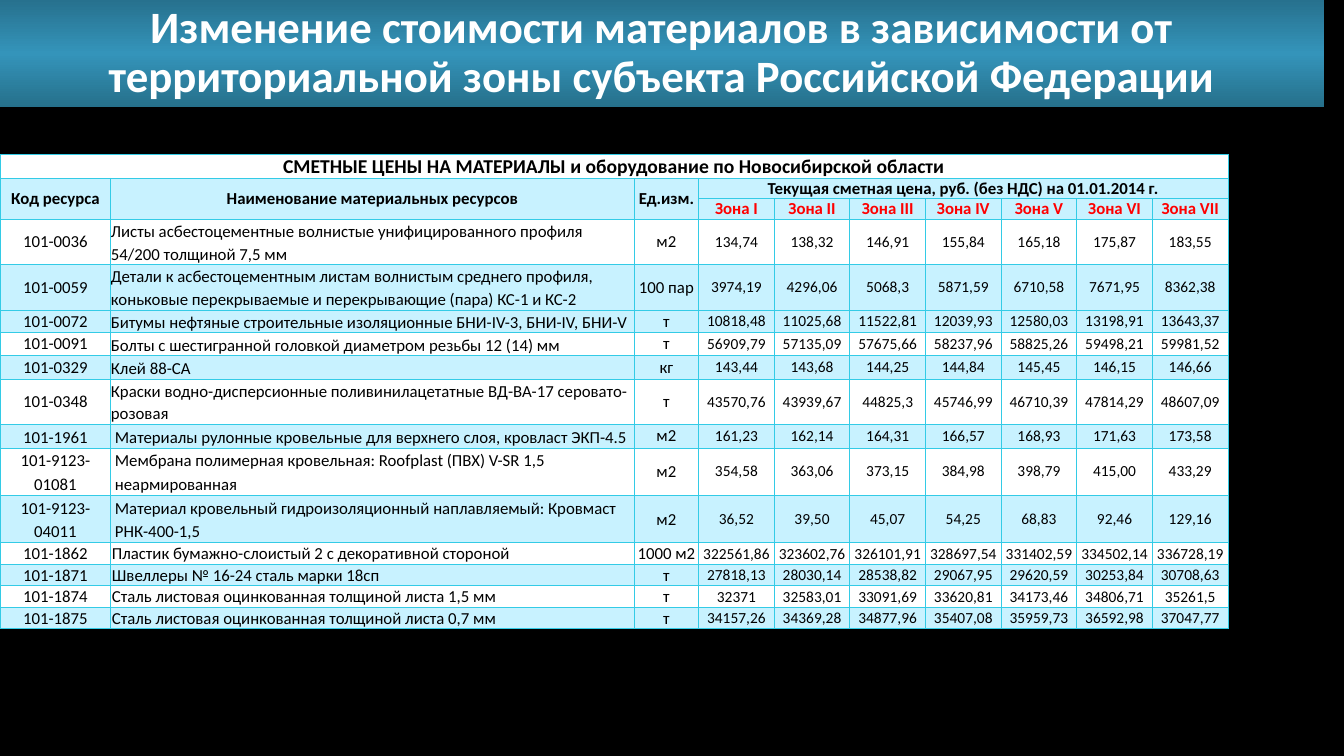
"""Builds a slide with material prices by territorial zone."""
from lxml import etree
from pptx import Presentation, util as u
from pptx.dml.color import RGBColor
from pptx.enum import text
from pptx.oxml import ns

WHITE = RGBColor(0xFF, 0xFF, 0xFF)
BLACK = RGBColor(0, 0, 0)
RED = RGBColor(0xFF, 0, 0)
TINT = RGBColor(0xC8, 0xF2, 0xFF)
CYAN = RGBColor(0x33, 0xCB, 0xE6)
TEAL = RGBColor(0x34, 0x94, 0xBA)
DARK = RGBColor(0x27, 0x71, 0x8E)
DEEP = RGBColor(0x26, 0x70, 0x8B)
MID, TOP, LOW = (text.MSO_ANCHOR.MIDDLE, text.MSO_ANCHOR.TOP,
                 text.MSO_ANCHOR.BOTTOM)
MAIN, LEFT = text.PP_ALIGN.CENTER, text.PP_ALIGN.LEFT

TITLE = ("Изменение стоимости материалов в зависимости от "
         "территориальной зоны субъекта Российской Федерации")
HEAD = "СМЕТНЫЕ ЦЕНЫ НА МАТЕРИАЛЫ и оборудование по Новосибирской области"
LABELS = ["Код ресурса", "Наименование материальных ресурсов", "Ед.изм.",
          "Текущая сметная цена, руб. (без НДС) на 01.01.2014 г."]
ZONES = ["I", "II", "III", "IV", "V", "VI", "VII"]
ITEMS = [
    ("101-0036", "Листы асбестоцементные волнистые унифицированного профиля "
     "54/200 толщиной 7,5 мм", "м2",
     "134,74 138,32 146,91 155,84 165,18 175,87 183,55"),
    ("101-0059", "Детали к асбестоцементным листам волнистым среднего профиля, "
     "коньковые перекрываемые и перекрывающие (пара) КС-1 и КС-2", "100 пар",
     "3974,19 4296,06 5068,3 5871,59 6710,58 7671,95 8362,38"),
    ("101-0072", "Битумы нефтяные строительные изоляционные "
     "БНИ-IV-3, БНИ-IV, БНИ-V", "т",
     "10818,48 11025,68 11522,81 12039,93 12580,03 13198,91 13643,37"),
    ("101-0091", "Болты с шестигранной головкой диаметром резьбы 12 (14) мм", "т",
     "56909,79 57135,09 57675,66 58237,96 58825,26 59498,21 59981,52"),
    ("101-0329", "Клей 88-СА", "кг",
     "143,44 143,68 144,25 144,84 145,45 146,15 146,66"),
    ("101-0348", "Краски водно-дисперсионные поливинилацетатные ВД-ВА-17 "
     "серовато-розовая", "т",
     "43570,76 43939,67 44825,3 45746,99 46710,39 47814,29 48607,09"),
    ("101-1961", "Материалы рулонные кровельные для верхнего слоя, "
     "кровласт ЭКП-4.5", "м2",
     "161,23 162,14 164,31 166,57 168,93 171,63 173,58"),
    ("101-9123-01081", "Мембрана полимерная кровельная: Roofplast (ПВХ) "
     "V-SR 1,5 неармированная", "м2",
     "354,58 363,06 373,15 384,98 398,79 415,00 433,29"),
    ("101-9123-04011", "Материал кровельный гидроизоляционный наплавляемый: "
     "Кровмаст РНК-400-1,5", "м2",
     "36,52 39,50 45,07 54,25 68,83 92,46 129,16"),
    ("101-1862", "Пластик бумажно-слоистый 2 с декоративной стороной", "1000 м2",
     "322561,86 323602,76 326101,91 328697,54 331402,59 334502,14 336728,19"),
    ("101-1871", "Швеллеры № 16-24 сталь марки 18сп", "т",
     "27818,13 28030,14 28538,82 29067,95 29620,59 30253,84 30708,63"),
    ("101-1874", "Сталь листовая оцинкованная толщиной листа 1,5 мм", "т",
     "32371 32583,01 33091,69 33620,81 34173,46 34806,71 35261,5"),
    ("101-1875", "Сталь листовая оцинкованная толщиной листа 0,7 мм", "т",
     "34157,26 34369,28 34877,96 35407,08 35959,73 36592,98 37047,77"),
]
WIDTHS = [1.1, 5.19, 0.64] + [0.75] * 7
HEIGHTS = [0.24, 0.2, 0.2, 0.45, 0.45, 0.22, 0.23, 0.23, 0.45,
           0.23, 0.47, 0.47, 0.21, 0.21, 0.21, 0.21]
PALE = {0, 3, 6, 8, 10, 12, 14}
ROLLS = range(6, 9)


class Deck:
    """Holds the style and the current slide."""

    def __init__(self):
        self.show = Presentation()
        self.show.slide_width = u.Inches(13.33)
        self.show.slide_height = u.Inches(7.5)
        self.slide = self.show.slides.add_slide(self.show.slide_layouts[5])
        fill = self.slide.background.fill
        fill.solid()
        fill.fore_color.rgb = BLACK

    def style(self, item, values):
        """Sets attributes from a dict."""
        for name, value in values.items():
            setattr(item, name, value)

    def label(self, frame, words, size, color=BLACK, bold=False, **para):
        """Puts one formatted paragraph in a text frame."""
        line = frame.paragraphs[0]
        self.style(line, {"alignment": MAIN, **para})
        run = line.add_run()
        run.text = words
        self.style(run.font, {"name": "Calibri", "size": u.Pt(size), "bold": bold})
        run.font.color.rgb = color

    def title(self, words):
        """Places the title on a gradient band."""
        band = self.slide.shapes.title
        self.style(band, {"left": 0, "top": 0, "width": u.Inches(13.13),
                          "height": u.Inches(1.06)})
        band.fill.gradient()
        band.fill.gradient_angle = 270
        stops = band._element.spPr.find(".//" + ns.qn("a:gsLst"))
        for stop in list(stops):
            stops.remove(stop)
        for pos, color in ((0, DARK), (50, TEAL), (100, DEEP)):
            stop = etree.SubElement(stops, ns.qn("a:gs"), pos=str(pos * 1000))
            etree.SubElement(stop, ns.qn("a:srgbClr"), val=str(color))
        self.style(band.text_frame, {"word_wrap": True, "vertical_anchor": MID,
                                     "auto_size": text.MSO_AUTO_SIZE.NONE})
        self.label(band.text_frame, words, 32, WHITE, True, line_spacing=0.9)

    def table(self, left, top, widths, heights):
        """Adds a bordered grid with pale and tinted rows."""
        frame = self.slide.shapes.add_table(
            len(heights), len(widths), u.Inches(left), u.Inches(top),
            u.Inches(sum(widths)), u.Inches(sum(heights)))
        grid = frame.table
        self.style(grid, {"first_row": False, "horz_banding": False})
        for col, width in zip(grid.columns, widths):
            col.width = u.Inches(width)
        for index, (row, height) in enumerate(zip(grid.rows, heights)):
            row.height = u.Inches(height)
            for cell in row.cells:
                self.edge(cell)
                cell.fill.solid()
                cell.fill.fore_color.rgb = WHITE if index in PALE else TINT
        return grid

    def edge(self, cell):
        """Draws the four borders of a cell."""
        props = cell._tc.get_or_add_tcPr()
        for side in "LRTB":
            line = etree.SubElement(props, ns.qn("a:ln" + side), w=str(int(u.Pt(0.75))))
            fill = etree.SubElement(line, ns.qn("a:solidFill"))
            etree.SubElement(fill, ns.qn("a:srgbClr"), val=str(CYAN))

    def cell(self, cell, words, size=12, anchor=MID, pad=0, rise=0, **look):
        """Fills a cell with text."""
        self.style(cell, {"margin_left": u.Inches(pad), "margin_right": u.Inches(pad),
                          "margin_top": u.Inches(rise), "margin_bottom": 0,
                          "vertical_anchor": anchor})
        self.label(cell.text_frame, words, size, **look)


def main():
    """Builds and saves the slide."""
    deck = Deck()
    grid = deck.table(0, 1.53, WIDTHS, HEIGHTS)
    grid.cell(0, 0).merge(grid.cell(0, 9))
    deck.cell(grid.cell(0, 0), HEAD, 14, LOW, bold=True)
    for col, label in enumerate(LABELS):
        end = (2, col) if col < 3 else (1, 9)
        grid.cell(1, col).merge(grid.cell(*end))
        deck.cell(grid.cell(1, col), label, anchor=MID if col < 3 else TOP, bold=True)
    for col, zone in enumerate(ZONES, 3):
        deck.cell(grid.cell(2, col), f"Зона {zone}", anchor=TOP, color=RED, bold=True)
    for index, (code, name, unit, prices) in enumerate(ITEMS):
        edge = 0.01 if index >= 8 else 0
        base = {"pad": edge, "rise": edge}
        lead = base
        if index in ROLLS:
            lead = {"pad": 0.04, "anchor": TOP, "line_spacing": 1.15}
        space = {"line_spacing": 1.1} if index < ROLLS.start else {}
        cells = list(grid.rows[index + 3].cells)
        deck.cell(cells[0], code, **lead)
        deck.cell(cells[1], name, alignment=LEFT, **{**lead, **space})
        deck.cell(cells[2], unit, **base)
        for cell, price in zip(cells[3:], prices.split()):
            deck.cell(cell, price, 11, **base)
    deck.title(TITLE)
    deck.show.save("out.pptx")


if __name__ == "__main__":
    main()
